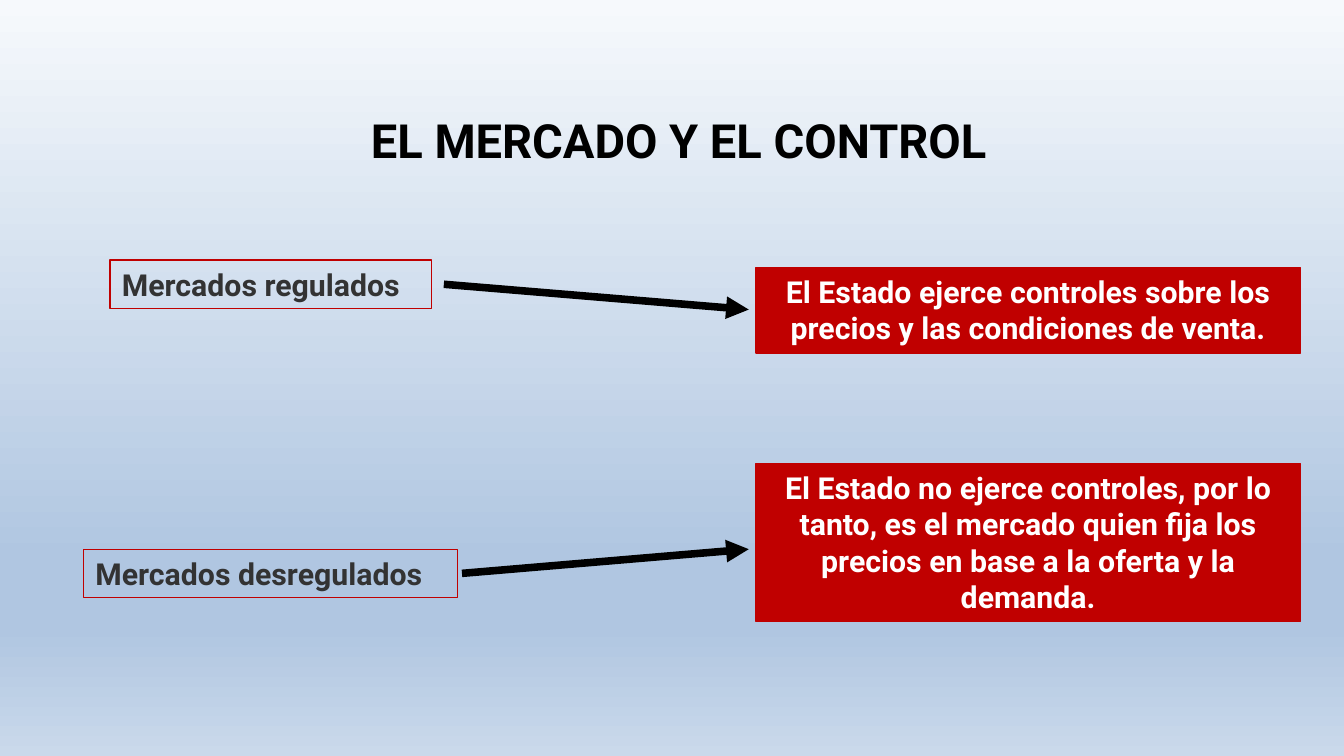
from dataclasses import dataclass
from typing import NamedTuple

from lxml.etree import SubElement
from pptx import Presentation
from pptx.dml.color import RGBColor
from pptx.enum.shapes import MSO_CONNECTOR, MSO_SHAPE
from pptx.enum.text import MSO_ANCHOR, MSO_AUTO_SIZE, PP_ALIGN
from pptx.oxml.ns import qn
from pptx.util import Pt


@dataclass(frozen=True)
class Theme:
    font: str = "Roboto"
    title_size: float = 28
    body_size: float = 18
    black: str = "000000"
    dark: str = "333333"
    white: str = "FFFFFF"
    red: str = "C00000"
    border: float = 0.75
    arrow: float = 4.5
    backdrop: tuple = ((0, "F6F9FC"), (74, "B0C6E1"), (83, "B0C6E1"), (100, "CAD9EB"))


THEME = Theme()


class Box(NamedTuple):
    left: float
    top: float
    width: float
    height: float

    @property
    def right(self):
        return self.left + self.width

    @property
    def middle(self):
        return self.top + self.height / 2

    def lengths(self):
        return [Pt(value) for value in self]


class Market(NamedTuple):
    name: str
    name_box: Box
    rule: str
    rule_box: Box
    arrow_gap: float
    arrow_end_y: float


MARKETS = (
    Market(
        "Mercados regulados", Box(65.5, 154.8, 191.5, 28.8),
        "El Estado ejerce controles sobre los precios y las condiciones de venta.",
        Box(450, 159.1, 324, 51.1), 7.2, 184.3,
    ),
    Market(
        "Mercados desregulados", Box(49.7, 326.9, 222.5, 28.8),
        "El Estado no ejerce controles, por lo tanto, es el mercado quien fija "
        "los precios en base a la oferta y la demanda.",
        Box(450, 275.8, 324, 94.3), 2.8, 326.9,
    ),
)


def paint_backdrop(slide):
    fill = slide.background.fill
    fill.gradient()
    fill.gradient_angle = 270
    stops = slide.element.find(".//" + qn("a:gsLst"))
    stops.clear()
    for percent, color in THEME.backdrop:
        stop = SubElement(stops, qn("a:gs"), pos=str(percent * 1000))
        SubElement(stop, qn("a:srgbClr"), val=color)


def write(frame, text, size, color, align, anchor):
    frame.word_wrap = True
    frame.vertical_anchor = anchor
    frame.text = text
    paragraph = frame.paragraphs[0]
    paragraph.alignment = align
    font = paragraph.runs[0].font
    font.name, font.size, font.bold = THEME.font, Pt(size), True
    font.color.rgb = RGBColor.from_string(color)


def add_title(slide, box, text):
    title = slide.shapes.add_textbox(*box.lengths())
    write(title.text_frame, text, THEME.title_size, THEME.black,
          PP_ALIGN.CENTER, MSO_ANCHOR.MIDDLE)


def add_panel(slide, box, text, color, align, fill=None):
    panel = slide.shapes.add_shape(MSO_SHAPE.RECTANGLE, *box.lengths())
    panel.shadow.inherit = False
    if fill:
        panel.fill.solid()
        panel.fill.fore_color.rgb = RGBColor.from_string(fill)
    else:
        panel.fill.background()
    panel.line.color.rgb = RGBColor.from_string(THEME.red)
    panel.line.width = Pt(THEME.border)
    write(panel.text_frame, text, THEME.body_size, color, align, MSO_ANCHOR.TOP)
    panel.text_frame.auto_size = MSO_AUTO_SIZE.SHAPE_TO_FIT_TEXT


def add_arrow(slide, start, end):
    arrow = slide.shapes.add_connector(
        MSO_CONNECTOR.STRAIGHT, *(Pt(value) for value in (*start, *end))
    )
    arrow.line.color.rgb = RGBColor.from_string(THEME.black)
    arrow.line.width = Pt(THEME.arrow)
    properties = arrow.element.spPr
    SubElement(properties.find(qn("a:ln")), qn("a:tailEnd"), type="triangle")
    SubElement(properties, qn("a:effectLst"))


def add_market(slide, market):
    name_box, rule_box = market.name_box, market.rule_box
    add_panel(slide, name_box, market.name, THEME.dark, PP_ALIGN.LEFT)
    add_arrow(
        slide,
        (name_box.right + market.arrow_gap, name_box.middle),
        (rule_box.left - 4.3, market.arrow_end_y),
    )
    add_panel(slide, rule_box, market.rule, THEME.white, PP_ALIGN.CENTER, THEME.red)


def main():
    deck = Presentation()
    deck.slide_width, deck.slide_height = Pt(800), Pt(450)
    slide = deck.slides.add_slide(deck.slide_layouts[6])
    paint_backdrop(slide)
    add_title(slide, Box(43.9, 58.3, 720, 49.7), "EL MERCADO Y EL CONTROL")
    for market in MARKETS:
        add_market(slide, market)
    deck.save("out.pptx")


if __name__ == "__main__":
    main()
